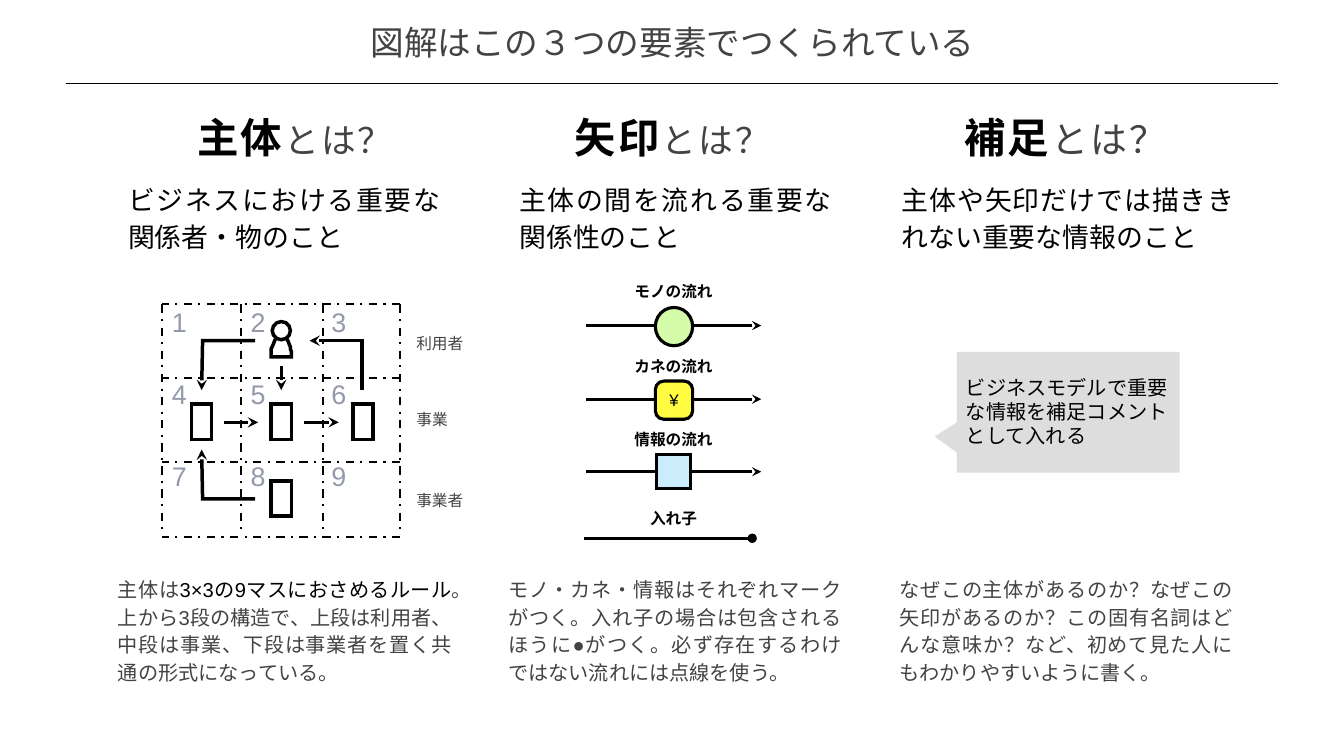
from lxml.etree import SubElement
from pptx import Presentation
from pptx.dml.color import RGBColor
from pptx.enum.dml import MSO_LINE as Dash
from pptx.enum.shapes import MSO_CONNECTOR as Link, MSO_SHAPE as Form
from pptx.enum.text import MSO_ANCHOR as Anchor, PP_ALIGN as Align
from pptx.oxml.ns import qn
from pptx.util import Emu, Pt

PX = 9144
FONT = "Arial"
BLACK = RGBColor(0x00, 0x00, 0x00)
WHITE = RGBColor(0xFF, 0xFF, 0xFF)
GRAY = RGBColor(0x43, 0x43, 0x43)
SLATE = RGBColor(0x92, 0x99, 0xAA)
SILVER = RGBColor(0xDD, 0xDD, 0xDD)
GREEN = RGBColor(0xD4, 0xFC, 0xA9)
YELLOW = RGBColor(0xFF, 0xFC, 0x41)
BLUE = RGBColor(0xCB, 0xEC, 0xFA)

deck = Presentation()
deck.slide_width, deck.slide_height = Emu(1333 * PX), Emu(750 * PX)
slide = deck.slides.add_slide(deck.slide_layouts[6])
shapes = slide.shapes


def px(*nums):
    return [Emu(n * PX) for n in nums]


def say(box, runs, align=Align.LEFT, anchor=Anchor.TOP, pad=(0, 0, 0, 0), wrap=True, lead=None, gap=None):
    frame = box.text_frame
    frame.word_wrap = wrap
    frame.vertical_anchor = anchor
    frame.margin_left, frame.margin_top, frame.margin_right, frame.margin_bottom = px(*pad)
    para = frame.paragraphs[0]
    para.alignment = align
    para.line_spacing = lead
    for text, size, color, bold in runs:
        run = para.add_run()
        run.text = text
        font = run.font
        font.name, font.size, font.bold = FONT, Pt(size), bold
        font.color.rgb = color
        props = run._r.get_or_add_rPr()
        SubElement(props, qn("a:ea"), typeface=FONT)
        if gap:
            props.set("spc", str(gap))


say(shapes.add_textbox(*px(67, 0, 1200, 84)), [("図解はこの３つの要素でつくられている", 24, GRAY, False)],
    Align.CENTER, Anchor.MIDDLE, (8, 8, 8, 8))

heads = [
    ((105, 104, 375, 63), "主体", 24.8),
    ((503, 115, 328, 42), "矢印", 24.8),
    ((914, 115, 285, 42), "補足", 26.4),
]
for box, word, size in heads:
    say(shapes.add_textbox(*px(*box)), [(word, 29.6, BLACK, True), ("とは？", size, GRAY, False)],
        Align.CENTER, Anchor.MIDDLE, gap=150)

leads = [
    (115, 328, "ビジネスにおける重要な関係者・物のこと"),
    (503, 328, "主体の間を流れる重要な関係性のこと"),
    (882, 349, "主体や矢印だけでは描ききれない重要な情報のこと"),
]
for x, w, text in leads:
    say(shapes.add_textbox(*px(x, 171, w, 76)), [(text, 19.2, BLACK, False)],
        Align.JUSTIFY, pad=(12, 6, 6, 6), lead=1.15)

notes = [
    (105, 177, [("主体は", GRAY), ("3×3の9マスにおさめるルール", BLACK),
                ("。上から3段の構造で、上段は利用者、中段は事業、下段は事業者を置く共通の形式になっている。", GRAY)]),
    (492, 134, [("モノ・カネ・情報はそれぞれマークがつく。入れ子の場合は包含されるほうに●がつく。"
                 "必ず存在するわけではない流れには点線を使う。", GRAY)]),
    (880, 177, [("なぜこの主体があるのか？なぜこの矢印があるのか？この固有名詞はどんな意味か？など、"
                 "初めて見た人にもわかりやすいように書く。", GRAY)]),
]
for x, h, parts in notes:
    say(shapes.add_textbox(*px(x, 563, 349, h)), [(text, 14.4, color, False) for text, color in parts],
        Align.JUSTIFY, pad=(12, 6, 6, 6), lead=1.15)

cols, rows = (161, 239, 320, 397), (302, 375, 458, 533)
strokes = [([(65, 83), (1268, 83)], 0.75, None, None)]
strokes += [([(581, y), (755, y)], 2.25, "stealth", None) for y in (323, 396, 468)]
strokes += [([(579, 534), (746, 534)], 2.25, "oval", None)]
strokes += [([(x, 302), (x, 531)], 1.5, None, Dash.DASH_DOT) for x in cols]
strokes += [([(397, y), (161, y)], 1.5, None, Dash.DASH_DOT) for y in rows]
routes = [
    [(222, 419), (256, 419)],
    [(302, 419), (336, 419)],
    [(279, 363), (279, 387)],
    [(253, 338), (201, 338), (200, 387)],
    [(359, 387), (359, 338), (307, 338)],
    [(253, 495), (201, 495), (200, 446)],
]
strokes += [(route, 2.5, "stealth", None) for route in routes]
for points, weight, tip, dash in strokes:
    if len(points) == 2:
        stroke = shapes.add_connector(Link.STRAIGHT, *px(*points[0], *points[1]))
        SubElement(stroke._element.spPr, qn("a:effectLst"))
    else:
        path = shapes.build_freeform(*points[0], scale=PX)
        path.add_line_segments(points[1:], close=False)
        stroke = path.convert_to_shape()
        stroke.fill.background()
        stroke.shadow.inherit = False
    stroke.line.color.rgb = BLACK
    stroke.line.width = Pt(weight)
    if dash:
        stroke.line.dash_style = dash
    edge = stroke.line._get_or_add_ln()
    SubElement(edge, qn("a:miter"), lim="800000")
    if tip:
        SubElement(edge, qn("a:tailEnd"), type=tip)

curves = [((289, 354), (289, 354), (289, 334), (279, 334)), ((279, 334), (268, 334), (269, 354), (269, 354))]
outline = [(289, 354)]
for a, b, c, d in curves:
    for step in range(1, 13):
        t = step / 12
        u = 1 - t
        outline.append(tuple(u**3 * p + 3 * u * u * t * q + 3 * u * t * t * r + t**3 * s
                             for p, q, r, s in zip(a, b, c, d)))
body = shapes.build_freeform(269, 354, scale=PX)
body.add_line_segments(outline, close=True)

marks = [
    (body.convert_to_shape(), WHITE, 2.5),
    (shapes.add_shape(Form.OVAL, *px(270, 319, 18, 18)), WHITE, 2.5),
]
for x, y in [(190, 401), (269, 401), (350, 401), (269, 477)]:
    marks.append((shapes.add_shape(Form.RECTANGLE, *px(x, y, 20, 35)), WHITE, 2.5))
coin = shapes.add_shape(Form.ROUNDED_RECTANGLE, *px(650, 378, 37, 38))
coin.adjustments[0] = 0.23
say(coin, [("¥", 12, BLACK, False)], Align.CENTER, Anchor.MIDDLE, (3, 3, 3, 3))
call = shapes.add_shape(Form.ROUNDED_RECTANGULAR_CALLOUT, *px(949, 349, 221, 120))
for i, value in enumerate((-0.6, 0.2, 0)):
    call.adjustments[i] = value
marks += [
    (shapes.add_shape(Form.OVAL, *px(650, 305, 37, 38)), GREEN, 2.25),
    (coin, YELLOW, 2.25),
    (shapes.add_shape(Form.RECTANGLE, *px(651, 451, 34, 34)), BLUE, 2.25),
    (call, SILVER, 0),
]
for mark, color, weight in marks:
    mark.shadow.inherit = False
    mark.fill.solid()
    mark.fill.fore_color.rgb = color
    if weight:
        mark.line.color.rgb = BLACK
        mark.line.width = Pt(weight)
        SubElement(mark.line._get_or_add_ln(), qn("a:miter"), lim="800000")
    else:
        mark.line.fill.background()

say(shapes.add_textbox(*px(955, 356, 223, 104)),
    [("ビジネスモデルで重要な情報を補足コメントとして入れる", 14.4, BLACK, False)],
    anchor=Anchor.MIDDLE, pad=(3, 3, 3, 3))

for y, text in [(270, "モノの流れ"), (344, "カネの流れ"), (417, "情報の流れ"), (495, "入れ子")]:
    say(shapes.add_textbox(*px(588, y, 160, 38)), [(text, 11.2, BLACK, True)],
        Align.CENTER, Anchor.MIDDLE, (3, 3, 3, 3))

for i in range(9):
    x, y = (168, 246, 326)[i % 3], (303, 375, 456)[i // 3]
    say(shapes.add_textbox(*px(x, y, 20, 33)), [(str(i + 1), 19.2, SLATE, False)], Align.CENTER, wrap=False)

for y, w, text in [(327, 63, "利用者"), (403, 48, "事業"), (483, 63, "事業者")]:
    say(shapes.add_textbox(*px(405, y, w, 27)), [(text, 11.2, GRAY, False)], pad=(8, 4, 8, 4), wrap=False)

deck.save("out.pptx")
